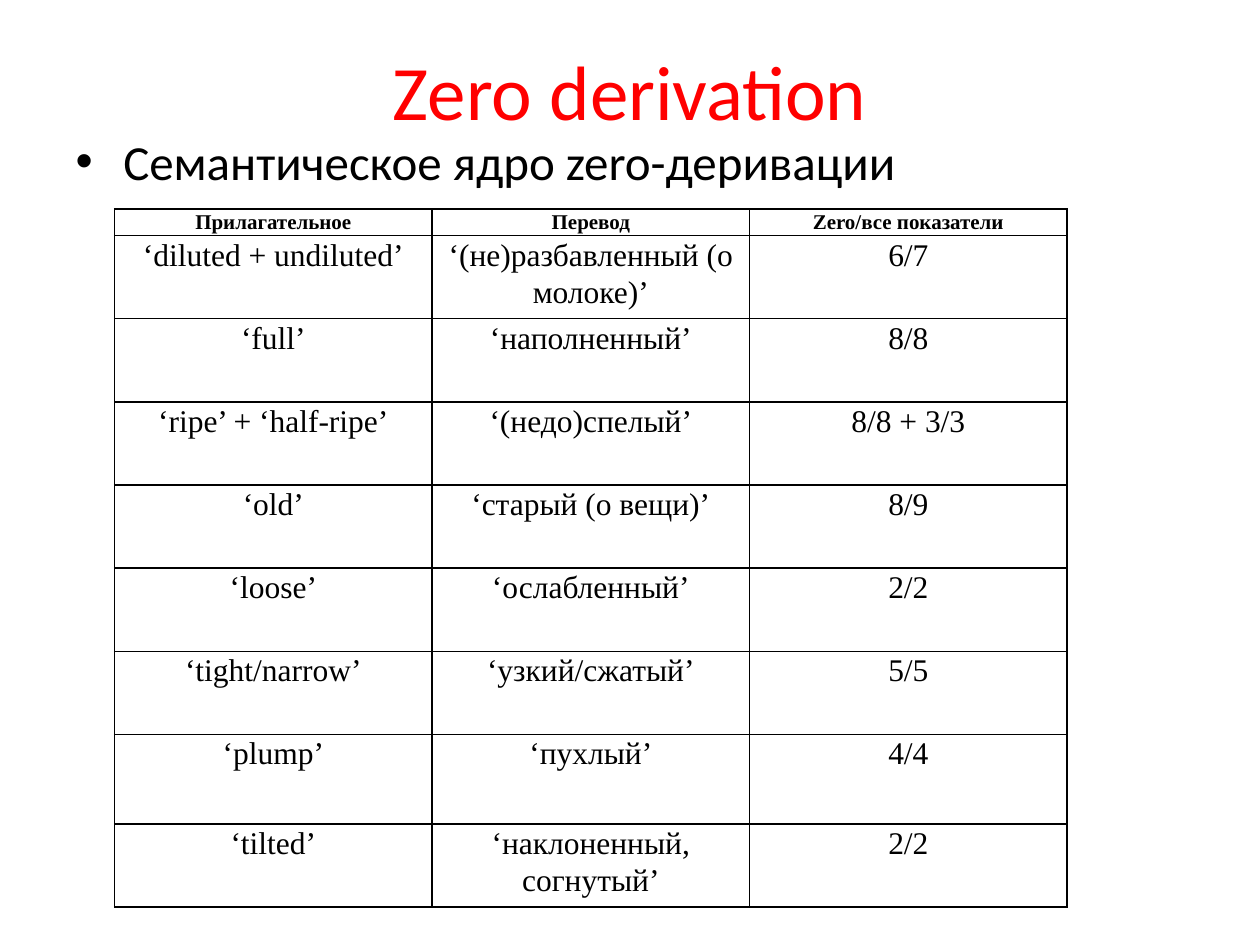
from lxml import etree
from pptx import Presentation
from pptx.dml.color import RGBColor
from pptx.enum import text
from pptx.oxml import ns
from pptx.util import Inches, Pt

BLACK, RED = "000000", "FF0000"
SERIF = "Times New Roman"
ROWS = [
    ("Прилагательное", "Перевод", "Zero/все показатели"),
    ("‘diluted + undiluted’", "‘(не)разбавленный (о молоке)’", "6/7"),
    ("‘full’", "‘наполненный’", "8/8"),
    ("‘ripe’ + ‘half-ripe’", "‘(недо)спелый’", "8/8 + 3/3"),
    ("‘old’", "‘старый (о вещи)’", "8/9"),
    ("‘loose’", "‘ослабленный’", "2/2"),
    ("‘tight/narrow’", "‘узкий/сжатый’", "5/5"),
    ("‘plump’", "‘пухлый’", "4/4"),
    ("‘tilted’", "‘наклоненный, согнутый’", "2/2"),
]
HEIGHTS = [0.21] + [0.66] * 6 + [0.71, 0.66]


def color(code):
    return RGBColor.from_string(code)


def write(frame, words, size, font="Calibri", fill=BLACK, bold=False,
          align=text.PP_ALIGN.CENTER, lead=None):
    para = frame.paragraphs[0]
    para.alignment = align
    para.line_spacing = lead
    run = para.add_run()
    run.text = words
    run.font.size, run.font.name, run.font.bold = Pt(size), font, bold
    run.font.color.rgb = color(fill)
    return para


def place(shape, box):
    shape.left, shape.top, shape.width, shape.height = map(Inches, box)


def add_title(slide, box):
    title = slide.shapes.title
    place(title, box)
    title.text_frame.vertical_anchor = text.MSO_ANCHOR.MIDDLE
    write(title.text_frame, "Zero derivation", 44, fill=RED)


def add_body(slide, box):
    body = slide.placeholders[1]
    place(body, box)
    para = write(body.text_frame, "Семантическое ядро zero-деривации", 28,
                 align=text.PP_ALIGN.LEFT)
    para.space_before = Pt(5.6)
    props = para._p.get_or_add_pPr()
    props.set("marL", str(Inches(0.38)))
    props.set("indent", str(Inches(-0.38)))
    etree.SubElement(props, ns.qn("a:buFont"), typeface="Arial")
    etree.SubElement(props, ns.qn("a:buChar"), char="•")


def add_borders(cell):
    props = cell._tc.get_or_add_tcPr()
    for place_no, side in enumerate(("lnL", "lnR", "lnT", "lnB")):
        line = etree.Element(ns.qn("a:" + side), w=str(Pt(1)))
        fill = etree.SubElement(line, ns.qn("a:solidFill"))
        etree.SubElement(fill, ns.qn("a:srgbClr"), val=BLACK)
        props.insert(place_no, line)


def add_grid(slide, box):
    frame = slide.shapes.add_table(len(ROWS), len(ROWS[0]), *map(Inches, box))
    table = frame.table
    table.horz_banding = table.first_row = False
    for col in table.columns:
        col.width = Inches(box[2] / len(ROWS[0]))
    for r, (words, height) in enumerate(zip(ROWS, HEIGHTS)):
        table.rows[r].height = Inches(height)
        for c, word in enumerate(words):
            cell = table.cell(r, c)
            cell.margin_left = cell.margin_right = Inches(0.07)
            cell.margin_top = cell.margin_bottom = 0
            cell.fill.background()
            add_borders(cell)
            write(cell.text_frame, word, 18 if r else 12, SERIF,
                  bold=r == 0, lead=1.07)


def main():
    deck = Presentation()
    deck.slide_width, deck.slide_height = Inches(10), Inches(7.5)
    slide = deck.slides.add_slide(deck.slide_layouts[1])
    add_title(slide, (0.5, 0.09, 9, 1.25))
    add_body(slide, (0.5, 0.99, 9, 6.51))
    add_grid(slide, (0.91, 1.66, 7.56, 5.54))
    deck.save("out.pptx")


if __name__ == "__main__":
    main()
